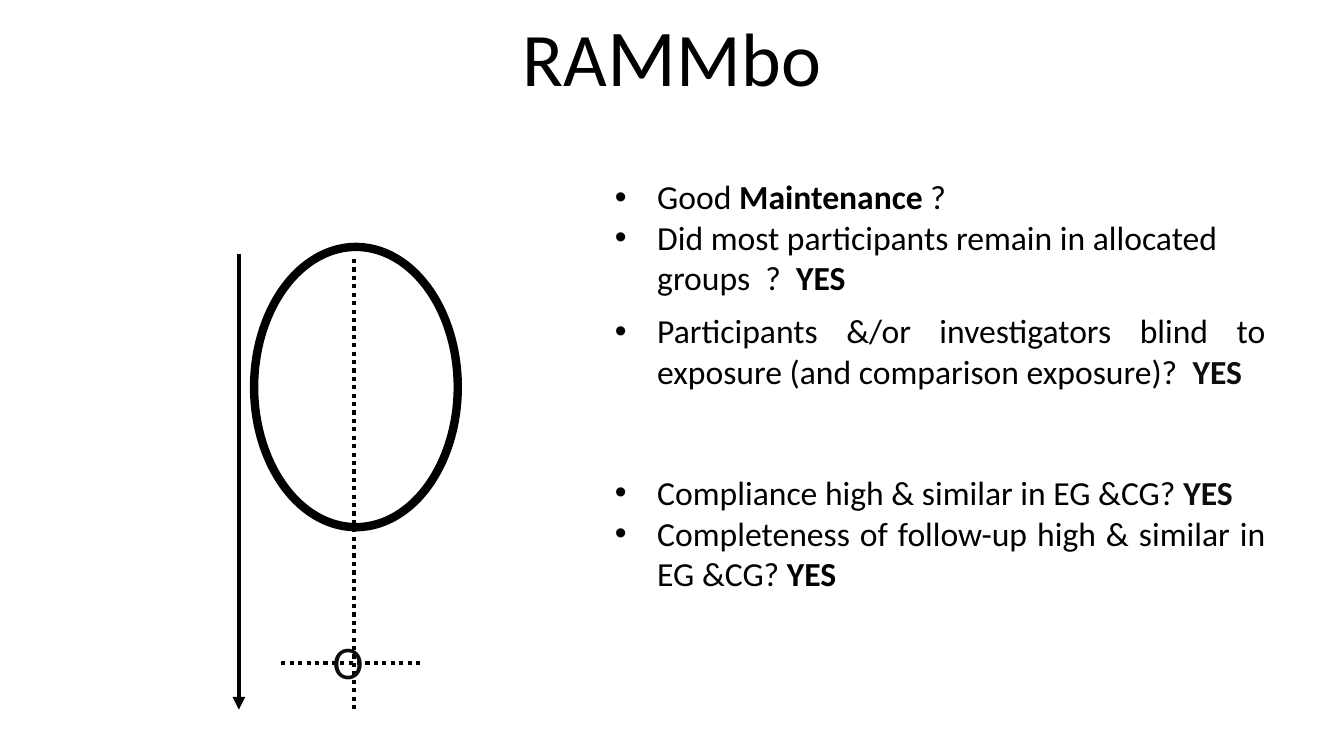
from lxml.etree import SubElement
from pptx import Presentation
from pptx.dml.color import RGBColor
from pptx.enum.dml import MSO_LINE
from pptx.enum.shapes import MSO_CONNECTOR, MSO_SHAPE
from pptx.enum.text import MSO_ANCHOR, PP_ALIGN
from pptx.oxml.ns import qn
from pptx.util import Inches, Pt

FONT, BLACK, SOFT_BLACK = "Calibri", "000000", "0D0D0D"
BULLET_SIZE, BULLET_INDENT = 24, 0.42

# Runs are (text, size, bold, colour)
TITLE = [("RA", 54, False, BLACK), ("M", 57.6, False, BLACK), ("Mbo", 54, False, BLACK)]
TITLE_BOX = (1.06, 0, 11.21, 1.2)
OUTCOME = [("O", 33.3, False, SOFT_BLACK)]
OUTCOME_BOX = (3.2, 6.23, 0.52, 0.67)

# Each bullet: space before in points, then (text, bold, colour) runs
MAINTENANCE = [
    (0, [("Good ", False, BLACK), ("Maintenance ", True, BLACK), ("?", False, BLACK)]),
    (0, [("Did most participants remain in allocated groups  ?  ", False, BLACK),
         ("YES", True, BLACK)]),
]
BLINDING = [
    (0, [("Participants &/or investigators blind to exposure (and comparison exposure)?  ",
          False, BLACK), ("YES", True, SOFT_BLACK)]),
    (58, [("Compliance high & similar in EG &CG? ", False, BLACK), ("YES", True, SOFT_BLACK)]),
    (0, [("Completeness of follow-up high & similar in EG &CG? ", False, BLACK),
         ("YES", True, BLACK)]),
]
BULLET_BOXES = [
    ((6, 1.7, 6.38, 1.32), MAINTENANCE, PP_ALIGN.LEFT),
    ((6, 3.03, 6.65, 2.93), BLINDING, PP_ALIGN.JUSTIFY),
]

ELLIPSE = (2.52, 2.45, 2.02, 2.78)
BOTTOM = 7.04
TIME_ARROW = (2.37, 2.52, 2.37, BOTTOM)
DOTTED_LINES = [(3.51, 2.57, 3.51, BOTTOM), (2.79, 6.58, 4.17, 6.58)]


def colour(value):
    return RGBColor.from_string(value)


def inches(box):
    return [Inches(length) for length in box]


def add_text(slide, box, wrap=True):
    frame = slide.shapes.add_textbox(*inches(box)).text_frame
    frame.word_wrap = wrap
    return frame


def fill_runs(paragraph, runs):
    paragraph.font.name = FONT
    for text, size, bold, run_colour in runs:
        run = paragraph.add_run()
        run.text = text
        run.font.name = FONT
        run.font.size = Pt(size)
        run.font.bold = bold
        run.font.color.rgb = colour(run_colour)


def add_bullets(slide, box, bullets, alignment):
    frame = add_text(slide, box)
    for index, (space_before, runs) in enumerate(bullets):
        paragraph = frame.add_paragraph() if index else frame.paragraphs[0]
        paragraph.alignment = alignment
        paragraph.space_before = Pt(space_before)
        properties = paragraph._p.get_or_add_pPr()
        properties.set("marL", str(Inches(BULLET_INDENT)))
        properties.set("indent", str(-Inches(BULLET_INDENT)))
        SubElement(properties, qn("a:buFont")).set("typeface", "Arial")
        SubElement(properties, qn("a:buChar")).set("char", "•")
        fill_runs(paragraph, [(text, BULLET_SIZE, bold, run_colour)
                              for text, bold, run_colour in runs])


def add_line(slide, ends, dash=None, arrow=False):
    connector = slide.shapes.add_connector(MSO_CONNECTOR.STRAIGHT, *inches(ends))
    connector.line.color.rgb = colour(BLACK)
    connector.line.width = Pt(3)
    if dash:
        connector.line.dash_style = dash
    if arrow:
        SubElement(connector.line._get_or_add_ln(), qn("a:tailEnd")).set("type", "triangle")
    SubElement(connector._element.spPr, qn("a:effectLst"))


def main():
    presentation = Presentation()
    presentation.slide_width, presentation.slide_height = Inches(13.33), Inches(7.5)
    slide = presentation.slides.add_slide(presentation.slide_layouts[6])

    title = add_text(slide, TITLE_BOX)
    title.vertical_anchor = MSO_ANCHOR.MIDDLE
    title.paragraphs[0].alignment = PP_ALIGN.CENTER
    title.paragraphs[0].line_spacing = 0.9
    fill_runs(title.paragraphs[0], TITLE)

    add_line(slide, TIME_ARROW, arrow=True)
    ellipse = slide.shapes.add_shape(MSO_SHAPE.OVAL, *inches(ELLIPSE))
    ellipse.shadow.inherit = False
    ellipse.fill.background()
    ellipse.line.color.rgb = colour(BLACK)
    ellipse.line.width = Pt(6)
    for ends in DOTTED_LINES:
        add_line(slide, ends, dash=MSO_LINE.ROUND_DOT)

    fill_runs(add_text(slide, OUTCOME_BOX, wrap=False).paragraphs[0], OUTCOME)
    for box, bullets, alignment in BULLET_BOXES:
        add_bullets(slide, box, bullets, alignment)

    presentation.save("out.pptx")


if __name__ == "__main__":
    main()
